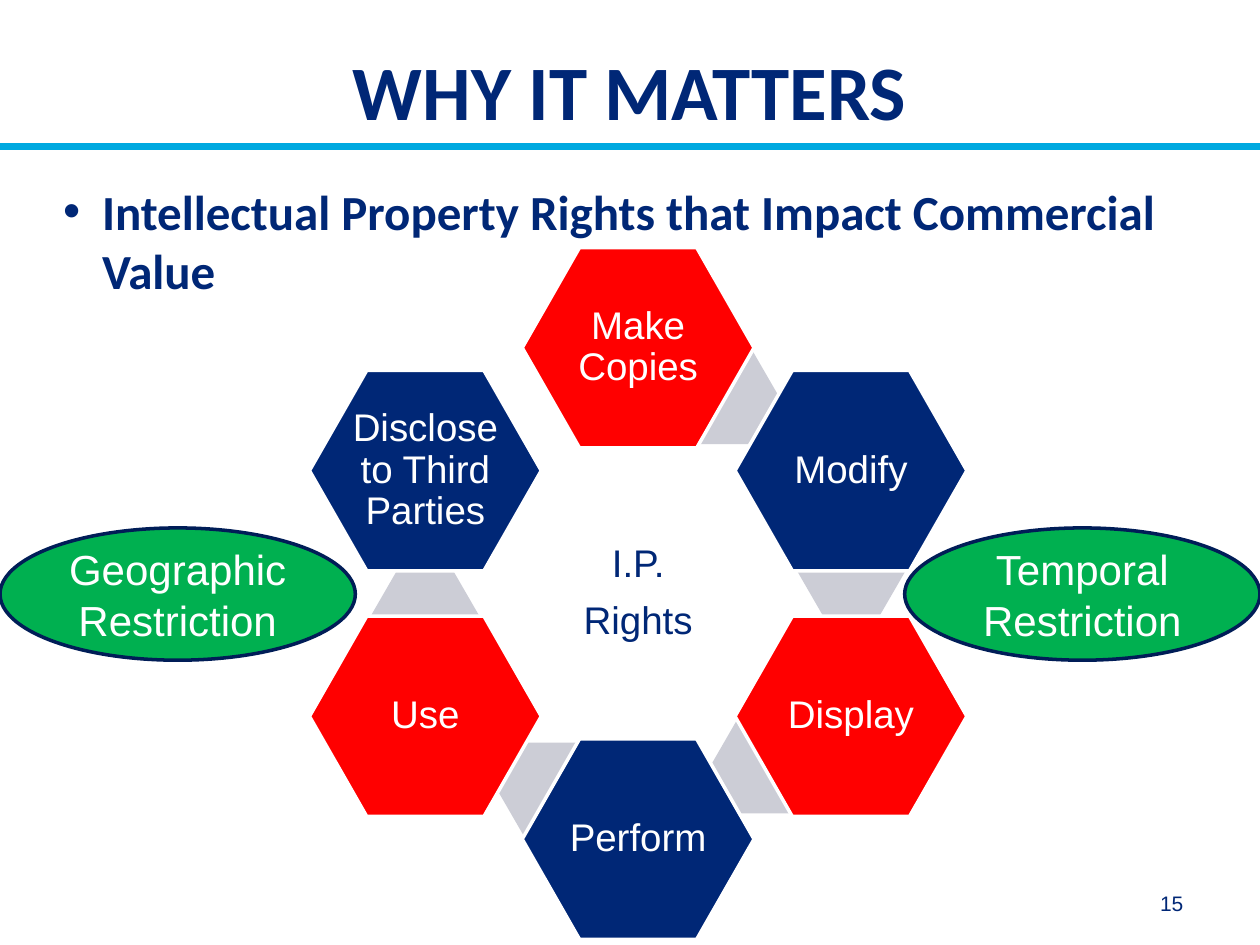
from math import cos, radians, sin

from lxml import etree
from pptx import Presentation
from pptx.dml.color import RGBColor
from pptx.enum.shapes import MSO_CONNECTOR as Connector, MSO_SHAPE as Shape
from pptx.enum.text import MSO_ANCHOR as Anchor, PP_ALIGN as Align
from pptx.oxml.ns import qn
from pptx.util import Inches, Pt

NAVY = RGBColor(0x00, 0x27, 0x76)
DARK_NAVY = RGBColor(0x00, 0x1D, 0x57)
CYAN = RGBColor(0x00, 0xA9, 0xE0)
RED = RGBColor(0xFF, 0x00, 0x00)
GREEN = RGBColor(0x00, 0xB0, 0x50)
GREY = RGBColor(0xCC, 0xCD, 0xD6)
WHITE = RGBColor(0xFF, 0xFF, 0xFF)

RIGHTS = ["Make Copies", "Modify", "Display", "Perform", "Use", "Disclose to Third Parties"]


def write_text(shape, text, size, color=NAVY, font="Arial", bold=False, align=Align.CENTER,
               anchor=Anchor.MIDDLE, insets=(0.1, 0.05), spacing=None, gap=0, bullet=None):
    """Fill a shape with one paragraph per line of text."""
    frame = shape.text_frame
    frame.word_wrap = True
    frame.vertical_anchor = anchor
    frame.margin_left = frame.margin_right = Inches(insets[0])
    frame.margin_top = frame.margin_bottom = Inches(insets[1])
    lines = text.split("\n")
    for index, line in enumerate(lines):
        paragraph = frame.paragraphs[0] if index == 0 else frame.add_paragraph()
        paragraph.alignment = align
        if spacing:
            paragraph.line_spacing = spacing
        if index < len(lines) - 1:
            paragraph.space_after = Pt(gap)
        if bullet:
            properties = paragraph._p.get_or_add_pPr()
            properties.set("marL", str(Inches(0.31)))
            properties.set("indent", str(-Inches(0.31)))
            etree.SubElement(properties, qn("a:buFont"), typeface="Arial")
            etree.SubElement(properties, qn("a:buChar"), char=bullet)
        run = paragraph.add_run()
        run.text = line
        run.font.size = Pt(size)
        run.font.name = font
        run.font.bold = bold
        run.font.color.rgb = color


def add_text(slide, box, text, size, **style):
    """Add a text box."""
    write_text(slide.shapes.add_textbox(*map(Inches, box)), text, size, **style)


def add_filled(slide, kind, box, fill, line=None):
    """Add a preset shape with a plain fill and an optional outline."""
    shape = slide.shapes.add_shape(kind, *map(Inches, box))
    shape.shadow.inherit = False
    shape.fill.solid()
    shape.fill.fore_color.rgb = fill
    if line is None:
        shape.line.fill.background()
    else:
        shape.line.color.rgb = line
        shape.line.width = Pt(2)
    return shape


def add_hexagon(slide, center, size, fill, line=None, adjust=0.286):
    """Add a hexagon around a centre point."""
    (x, y), (width, height) = center, size
    box = (x - width / 2, y - height / 2, width, height)
    shape = add_filled(slide, Shape.HEXAGON, box, fill, line)
    shape.adjustments[0] = adjust
    shape.adjustments[1] = 1.1547
    return shape


def add_header(slide, box):
    """Place the title and the rule below it."""
    left, top, width, height = box
    add_text(slide, (0.5, top, 9, 0.99), "WHY IT MATTERS", 44, font="Calibri", bold=True,
             anchor=Anchor.BOTTOM, insets=(0, 0.05))
    bottom = Inches(top + height)
    rule = slide.shapes.add_connector(Connector.STRAIGHT, Inches(left), bottom,
                                      Inches(left + width), bottom)
    rule.line.color.rgb = CYAN
    rule.line.width = Pt(4)
    etree.SubElement(rule._element.spPr, qn("a:effectLst"))


def add_rights_cycle(slide, box):
    """Place a ring of hexagons around a central one."""
    left, top, width, height = box
    middle = (left + width / 2, top + height / 2)
    label = {"size": 22, "insets": (0.03, 0.03), "spacing": 0.9}

    def on_ring(radius, angle):
        """Return the point at a clockwise angle from the top."""
        turn = radians(angle)
        return middle[0] + radius * sin(turn), middle[1] - radius * cos(turn)

    hub = add_hexagon(slide, middle, (2.25, 1.95), WHITE, WHITE)
    write_text(hub, "I.P.\nRights", gap=9, **label)
    for index, right in enumerate(RIGHTS):
        if index < len(RIGHTS) - 1:
            add_hexagon(slide, on_ring(1.7, 24.3 + 60 * index), (0.85, 0.73), GREY, adjust=0.289)
        fill = NAVY if index % 2 else RED
        hexagon = add_hexagon(slide, on_ring(1.95, 60 * index), (1.84, 1.59), fill, WHITE)
        write_text(hexagon, right, color=WHITE, **label)


def add_restriction(slide, box, text):
    """Place an oval naming a restriction."""
    oval = add_filled(slide, Shape.OVAL, box, GREEN, DARK_NAVY)
    write_text(oval, text, 24, color=WHITE)


def main():
    """Build and save the slide."""
    presentation = Presentation()
    presentation.slide_width = Inches(10)
    presentation.slide_height = Inches(7.5)
    slide = presentation.slides.add_slide(presentation.slide_layouts[6])
    add_header(slide, (0, 0.14, 10, 1.02))
    add_text(slide, (0.5, 1.44, 9.32, 5.2),
             "Intellectual Property Rights that Impact Commercial Value", 28, font="Calibri",
             bold=True, align=Align.LEFT, anchor=Anchor.TOP, insets=(0, 0), bullet="•")
    add_text(slide, (8.44, 7.05, 1.05, 0.27), "15", 12, align=Align.RIGHT, anchor=Anchor.BOTTOM)
    add_rights_cycle(slide, (2.45, 1.97, 5.23, 5.48))
    add_restriction(slide, (0, 4.19, 2.82, 1.05), "Geographic Restriction")
    add_restriction(slide, (7.18, 4.19, 2.82, 1.05), "Temporal\nRestriction")
    presentation.save("out.pptx")


if __name__ == "__main__":
    main()
